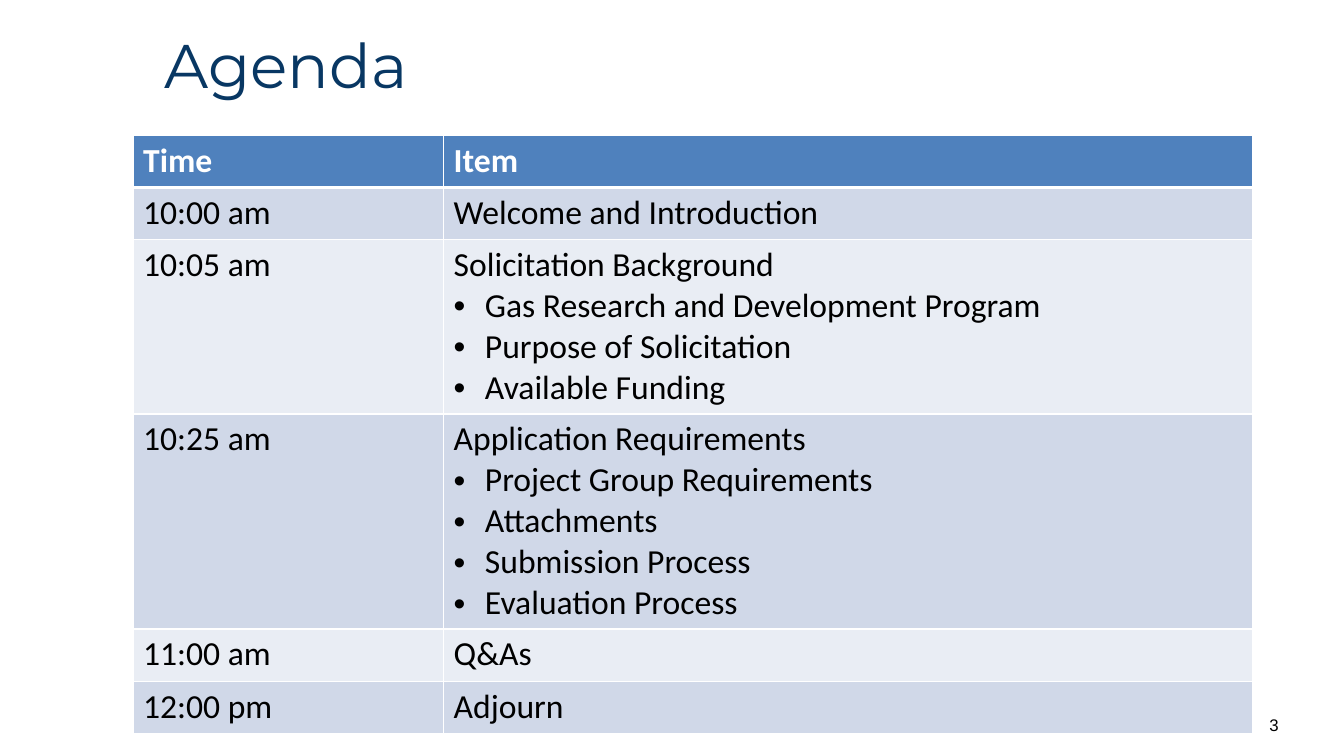
import pptx
import pptx.util
import pptx.oxml
import pptx.oxml.ns
import pptx.dml.color
import pptx.enum.text

Inches = pptx.util.Inches
Pt = pptx.util.Pt
RGBColor = pptx.dml.color.RGBColor
Align = pptx.enum.text.PP_ALIGN
Anchor = pptx.enum.text.MSO_ANCHOR

NAVY = RGBColor(0x08, 0x37, 0x63)
BLUE = RGBColor(0x4F, 0x81, 0xBD)
DARK = RGBColor(0xD0, 0xD8, 0xE8)
PALE = RGBColor(0xE9, 0xED, 0xF4)
WHITE = RGBColor(0xFF, 0xFF, 0xFF)
BLACK = RGBColor(0, 0, 0)

TITLE = "Agenda"
PAGE = "3"
ROWS = [
    ("Time", ["Item"]),
    ("10:00 am", ["Welcome and Introduction"]),
    ("10:05 am", ["Solicitation Background", "Gas Research and Development Program",
                  "Purpose of Solicitation", "Available Funding"]),
    ("10:25 am", ["Application Requirements", "Project Group Requirements", "Attachments",
                  "Submission Process", "Evaluation Process"]),
    ("11:00 am", ["Q&As"]),
    ("12:00 pm", ["Adjourn"]),
]
COLS = [3.08, 8.02]
LOW, TALL = 0.52, 1.66


def add_xml(parent, text):
    spaced = text.replace(" ", " " + pptx.oxml.ns.nsdecls("a") + " ", 1)
    parent.append(pptx.oxml.parse_xml(spaced))


def write(frame, lines, size=24, font="Calibri", color=BLACK, bold=False,
          align=Align.LEFT, anchor=Anchor.TOP, space=1.0):
    frame.word_wrap = True
    frame.vertical_anchor = anchor
    for i, line in enumerate(lines):
        par = frame.paragraphs[0] if i == 0 else frame.add_paragraph()
        par.alignment = align
        par.line_spacing = space
        if i:
            props = par._p.get_or_add_pPr()
            props.set("marL", str(Inches(0.31)))
            props.set("indent", str(-Inches(0.31)))
            add_xml(props, '<a:buFont typeface="Arial"/>')
            add_xml(props, '<a:buChar char="•"/>')
        run = par.add_run()
        run.text = line
        run.font.size = Pt(size)
        run.font.name = font
        run.font.bold = bold
        run.font.color.rgb = color


def edge(cell, row):
    props = cell._tc.get_or_add_tcPr()
    thick = {0: "B", 1: "T"}.get(row)
    for side in "LRTB":
        width = Pt(3 if side == thick else 1)
        add_xml(props, f'<a:ln{side} w="{width}"><a:solidFill>'
                       f'<a:srgbClr val="{WHITE}"/></a:solidFill></a:ln{side}>')


def main():
    deck = pptx.Presentation()
    deck.slide_width = Inches(13.33)
    deck.slide_height = Inches(7.5)
    slide = deck.slides.add_slide(deck.slide_layouts[5])

    title = slide.shapes.title
    title.left, title.top = Inches(1.53), Inches(0.11)
    title.width, title.height = Inches(10.89), Inches(1.14)
    write(title.text_frame, [TITLE], size=44, font="Montserrat", color=NAVY,
          anchor=Anchor.MIDDLE, space=0.9)

    highs = [TALL if len(lines) > 1 else LOW for _, lines in ROWS]
    table = slide.shapes.add_table(len(ROWS), len(COLS), Inches(1.32), Inches(1.34),
                                   Inches(sum(COLS)), Inches(sum(highs))).table
    for col, width in zip(table.columns, COLS):
        col.width = Inches(width)
    for r, (time, lines) in enumerate(ROWS):
        table.rows[r].height = Inches(highs[r])
        head = r == 0
        for c, text in enumerate([[time], lines]):
            cell = table.cell(r, c)
            edge(cell, r)
            cell.fill.solid()
            cell.fill.fore_color.rgb = BLUE if head else DARK if r % 2 else PALE
            write(cell.text_frame, text, color=WHITE if head else BLACK, bold=head)

    page = slide.shapes.add_textbox(Inches(10.81), Inches(6.99), Inches(1.97), Inches(0.4))
    write(page.text_frame, [PAGE], size=12, font="Arial", align=Align.RIGHT,
          anchor=Anchor.MIDDLE)
    deck.save("out.pptx")


if __name__ == "__main__":
    main()
